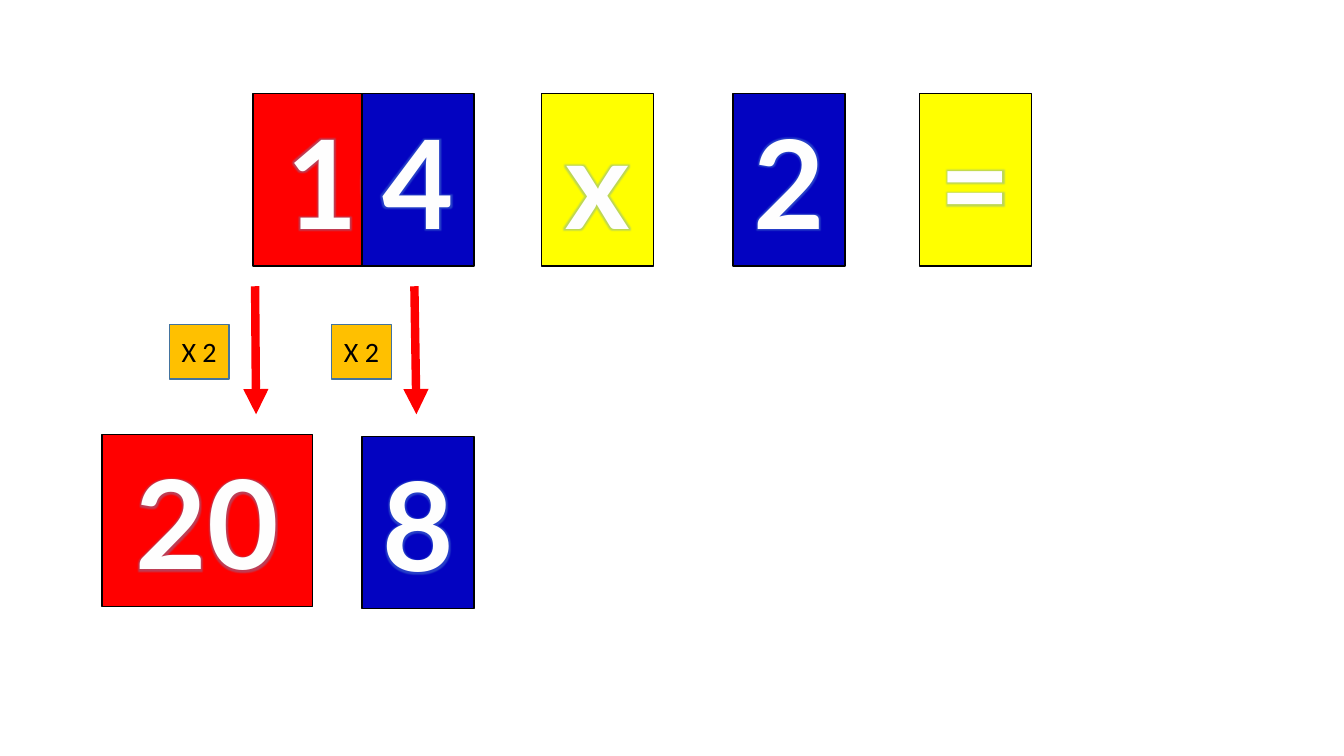
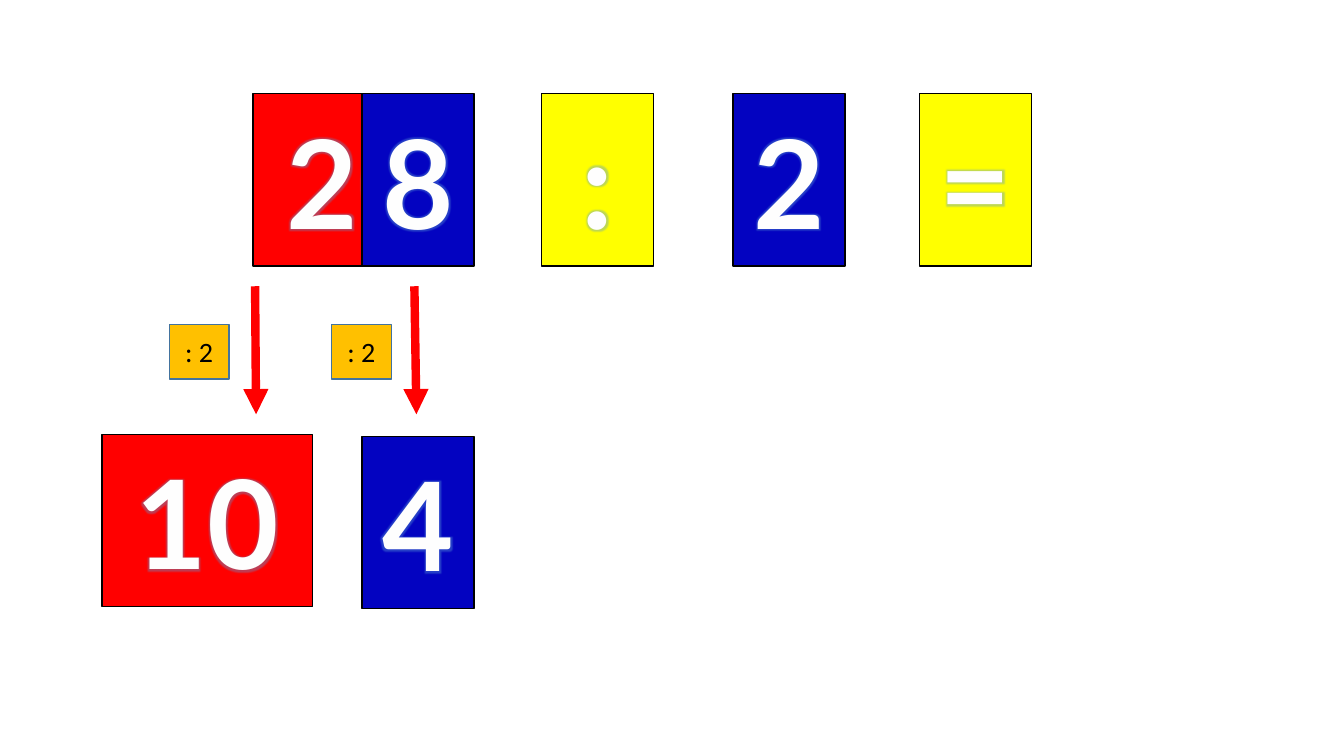
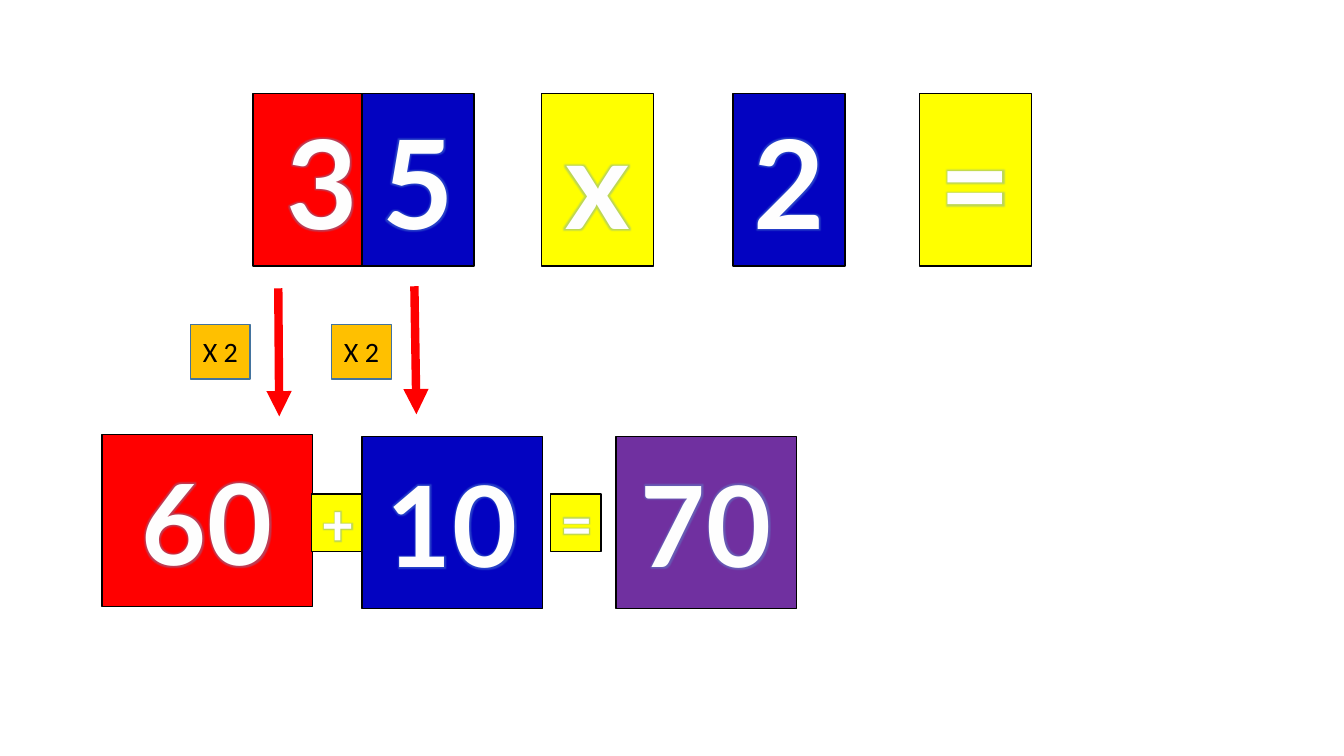
from lxml import etree
from pptx import Presentation
from pptx.dml.color import RGBColor
from pptx.enum.shapes import MSO_CONNECTOR, MSO_SHAPE
from pptx.enum.text import MSO_ANCHOR, PP_ALIGN
from pptx.oxml import parse_xml
from pptx.oxml.ns import nsdecls, qn
from pptx.util import Inches, Pt

RED = RGBColor(0xFF, 0x00, 0x00)
BLUE = RGBColor(0x03, 0x03, 0xC1)
YELLOW = RGBColor(0xFF, 0xFF, 0x00)
PURPLE = RGBColor(0x70, 0x30, 0xA0)
AMBER = RGBColor(0xFF, 0xC0, 0x00)
STEEL = RGBColor(0x43, 0x73, 0x9E)
GLOW = RGBColor(0x5B, 0x9B, 0xD5)
BLACK = RGBColor(0x00, 0x00, 0x00)
WHITE = RGBColor(0xFE, 0xFE, 0xFE)

# Columns, rows and card sizes, in inches
TENS, UNITS, OPERATOR, FACTOR, EQUALS = 2.51, 3.59, 5.37, 7.27, 9.12
RESULT_TENS, RESULT_SUM = 1.01, 6.11
TASK_ROW, ARROW_ROW, TAG_ROW, RESULT_ROW, SIGN_ROW = 0.93, 2.84, 3.22, 4.33, 4.9
WIDE, MEDIUM, NARROW, CARD_H = 2.09, 1.79, 1.11, 1.71
SIGN_W, SIGN_H, TAG_W, TAG_H = 0.5, 0.57, 0.59, 0.54
ARROW_H = 1.27

# tens, units, operator, step, arrow (x, y) and tag x of the tens, results
TASKS = [
    ("10", "4", "x", "X 2", (2.53, ARROW_ROW), 1.68, ("20", "8")),
    ("20", "8", ":", ": 2", (2.53, ARROW_ROW), 1.68, ("10", "4")),
    ("30", "5", "x", "X 2", (2.76, ARROW_ROW + 0.02), 1.89, ("60", "10", "70")),
]


def add_box(s, text, x, y, w, h, fill, size=88, tag=False):
    """Add a card with glowing digits, or a small plain tag."""
    box = s.shapes.add_shape(MSO_SHAPE.RECTANGLE, *map(Inches, (x, y, w, h)))
    box.shadow.inherit = False
    box.fill.solid()
    box.fill.fore_color.rgb = fill
    box.line.color.rgb = STEEL if tag else BLACK
    box.line.width = Pt(1)
    tf = box.text_frame
    tf.word_wrap = True
    tf.vertical_anchor = MSO_ANCHOR.MIDDLE
    p = tf.paragraphs[0]
    p.alignment = PP_ALIGN.CENTER
    r = p.add_run()
    r.text = text
    r.font.size = Pt(size)
    r.font.name = "Calibri" if tag else "Lato"
    r.font.color.rgb = BLACK if tag else WHITE
    if not tag:
        r.font.bold = True
        rPr = r.font._element
        rPr.set("spc", "50")
        color = f'<a:srgbClr val="{GLOW}"'
        rPr.insert(0, parse_xml(
            f'<a:ln {nsdecls("a")} w="9525"><a:solidFill>{color}/></a:solidFill></a:ln>'))
        rPr.find(qn("a:solidFill")).addnext(parse_xml(
            f'<a:effectLst {nsdecls("a")}><a:glow rad="38100">{color}>'
            '<a:alpha val="40000"/></a:srgbClr></a:glow></a:effectLst>'))


def add_arrow(s, x, y, drift):
    arrow = s.shapes.add_connector(
        MSO_CONNECTOR.STRAIGHT, Inches(x), Inches(y), Inches(x + drift), Inches(y + ARROW_H))
    arrow.line.color.rgb = RED
    arrow.line.width = Pt(6)
    etree.SubElement(arrow.line._get_or_add_ln(), qn("a:tailEnd"), type="triangle")
    etree.SubElement(arrow._element.spPr, qn("a:effectLst"))


prs = Presentation()
prs.slide_width, prs.slide_height = Inches(13.33), Inches(7.5)

for tens, units, operator, step, tens_arrow, tens_tag, results in TASKS:
    s = prs.slides.add_slide(prs.slide_layouts[6])
    has_sum = len(results) == 3
    size = 80 if has_sum else 88

    for text, x, w, fill in [
        (tens, TENS, WIDE, RED),
        (units, UNITS, NARROW, BLUE),
        (operator, OPERATOR, NARROW, YELLOW),
        ("2", FACTOR, NARROW, BLUE),
        ("=", EQUALS, NARROW, YELLOW),
    ]:
        add_box(s, text, x, TASK_ROW, w, CARD_H, fill)

    add_arrow(s, *tens_arrow, 0.01)
    add_arrow(s, 4.11, ARROW_ROW, 0.02)

    add_box(s, results[0], RESULT_TENS, RESULT_ROW - 0.02, WIDE, CARD_H, RED, size)
    add_box(s, results[1], UNITS, RESULT_ROW, MEDIUM if has_sum else NARROW, CARD_H, BLUE, size)

    for x in (tens_tag, 3.29):
        add_box(s, step, x, TAG_ROW, TAG_W, TAG_H, AMBER, 20, tag=True)

    if has_sum:
        for sign, x in (("+", UNITS - SIGN_W), ("=", 5.46)):
            add_box(s, sign, x, SIGN_ROW, SIGN_W, SIGN_H, YELLOW, 40)
        add_box(s, results[2], RESULT_SUM, RESULT_ROW, MEDIUM, CARD_H, PURPLE, size)

prs.save("out.pptx")
